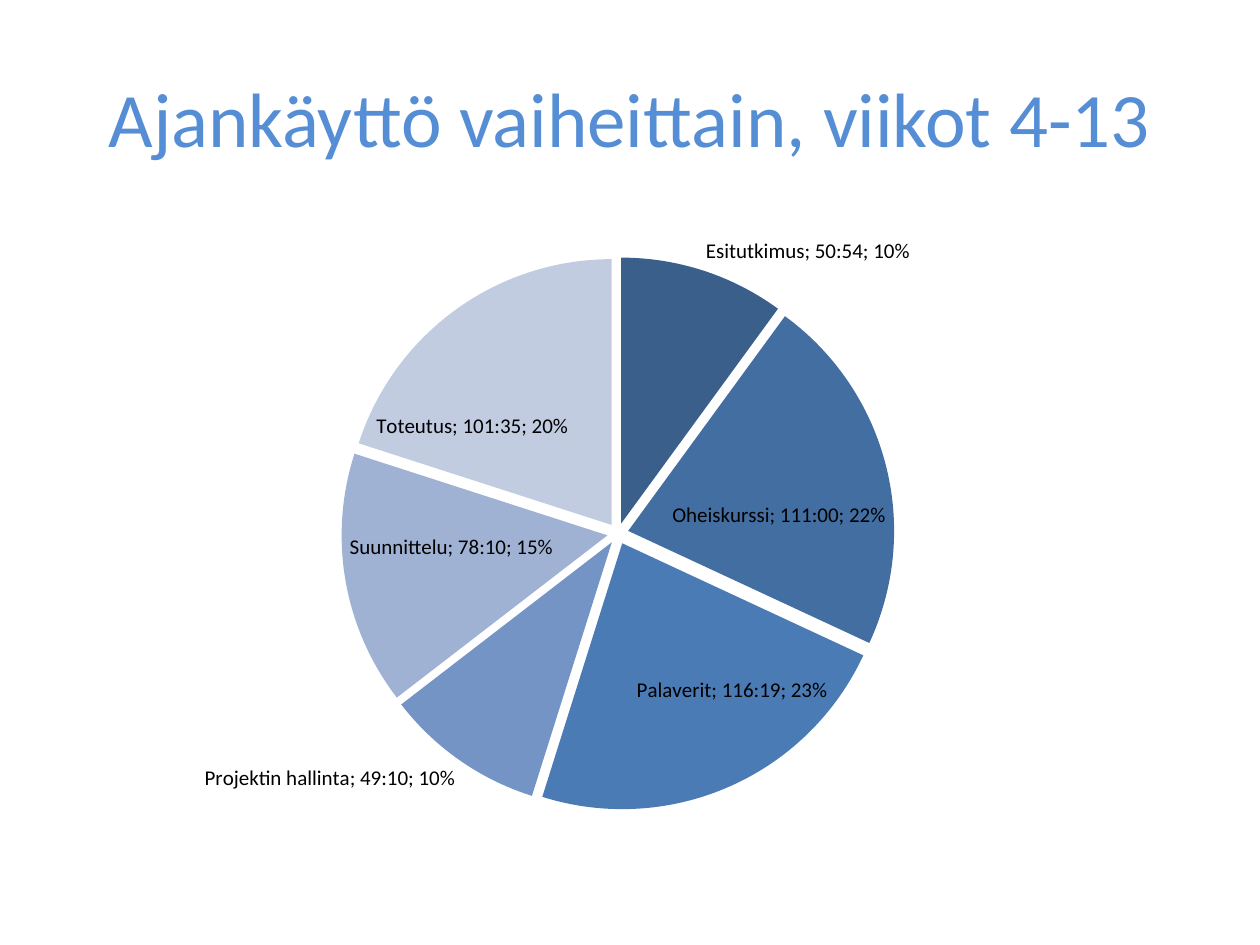
from typing import NamedTuple

from lxml import etree
from pptx import Presentation
from pptx import util as u
from pptx.chart.data import CategoryChartData
from pptx.dml.color import RGBColor
from pptx.enum import chart as ch
from pptx.enum import text
from pptx.oxml.ns import qn

PX = u.Inches(1) / 126
FONT = "Calibri"
TIME = "[h]:mm"
BLUE = RGBColor(0x55, 0x8E, 0xD5)
BLACK = RGBColor(0, 0, 0)
GAP = 4  # percent each slice is pulled out


class Box(NamedTuple):
    x: int
    y: int
    w: int
    h: int

    def emu(self) -> list[int]:
        return [round(n * PX) for n in self]


class Phase(NamedTuple):
    name: str
    hours: int
    mins: int
    fill: RGBColor

    def days(self) -> float:
        return round((self.hours + self.mins / 60) / 24, 6)


PHASES = [
    Phase("Esitutkimus", 50, 54, RGBColor(0x3A, 0x5F, 0x8B)),
    Phase("Oheiskurssi", 111, 0, RGBColor(0x42, 0x6E, 0xA1)),
    Phase("Palaverit", 116, 19, RGBColor(0x4A, 0x7B, 0xB5)),
    Phase("Projektin hallinta", 49, 10, RGBColor(0x73, 0x94, 0xC5)),
    Phase("Suunnittelu", 78, 10, RGBColor(0x9F, 0xB2, 0xD4)),
    Phase("Toteutus", 101, 35, RGBColor(0xC1, 0xCC, 0xE1)),
]
PLOT = {"x": 0.367, "y": 0.318, "w": 0.366, "h": 0.599}


def add_title(slide, box: Box, words: str) -> None:
    frame = slide.shapes.add_textbox(*box.emu()).text_frame
    frame.word_wrap = True
    frame.vertical_anchor = text.MSO_ANCHOR.MIDDLE
    para = frame.paragraphs[0]
    para.text = words
    para.alignment = text.PP_ALIGN.CENTER
    para.font.name, para.font.size = FONT, u.Pt(44)
    para.font.color.rgb = BLUE


def set_plot(chart) -> None:
    """Fix the inner plot area as fractions of the chart."""
    area = chart._chartSpace.find(".//" + qn("c:plotArea"))
    for old in area.findall(qn("c:layout")):
        area.remove(old)
    layout = etree.Element(qn("c:layout"))
    area.insert(0, layout)
    manual = etree.SubElement(layout, qn("c:manualLayout"))
    rules = {"layoutTarget": "inner", "xMode": "edge", "yMode": "edge", **PLOT}
    for tag, val in rules.items():
        etree.SubElement(manual, qn("c:" + tag)).set("val", str(val))


def add_pie(slide, box: Box, phases: list[Phase]) -> None:
    data = CategoryChartData(number_format=TIME)
    data.categories = [p.name for p in phases]
    data.add_series("Series 1", [p.days() for p in phases])
    chart = slide.shapes.add_chart(ch.XL_CHART_TYPE.PIE, *box.emu(), data).chart
    chart.has_legend = chart.has_title = False
    chart.font.name, chart.font.size = FONT, u.Pt(10)
    chart.font.color.rgb = BLACK
    set_plot(chart)

    # Slices
    plot = chart.plots[0]
    plot.vary_by_categories = True
    series = plot.series[0]
    for i, phase in enumerate(phases):
        look = series.points[i].format
        look.fill.solid()
        look.fill.fore_color.rgb = phase.fill
        look.line.fill.background()
    pull = etree.Element(qn("c:explosion"), val=str(GAP))
    series._element.find(qn("c:dPt")).addprevious(pull)

    # Labels: name; time; share
    labels = series.data_labels
    labels.show_category_name = labels.show_value = True
    labels.show_percentage = True
    labels.number_format = TIME
    labels.number_format_is_linked = True
    labels.position = ch.XL_LABEL_POSITION.BEST_FIT
    labels.font.name, labels.font.size = FONT, u.Pt(12)
    labels.font.color.rgb = BLACK
    mark = etree.Element(qn("c:separator"))
    mark.text = "; "
    labels._element.find(qn("c:showBubbleSize")).addnext(mark)


def main() -> None:
    deck = Presentation()
    deck.slide_width, deck.slide_height = u.Inches(10), u.Inches(7.5)
    slide = deck.slides.add_slide(deck.slide_layouts[6])
    add_pie(slide, Box(-213, -43, 1511, 934), PHASES)
    add_title(slide, Box(63, 38, 1134, 158), "Ajankäyttö vaiheittain, viikot 4-13")
    deck.save("out.pptx")


if __name__ == "__main__":
    main()
